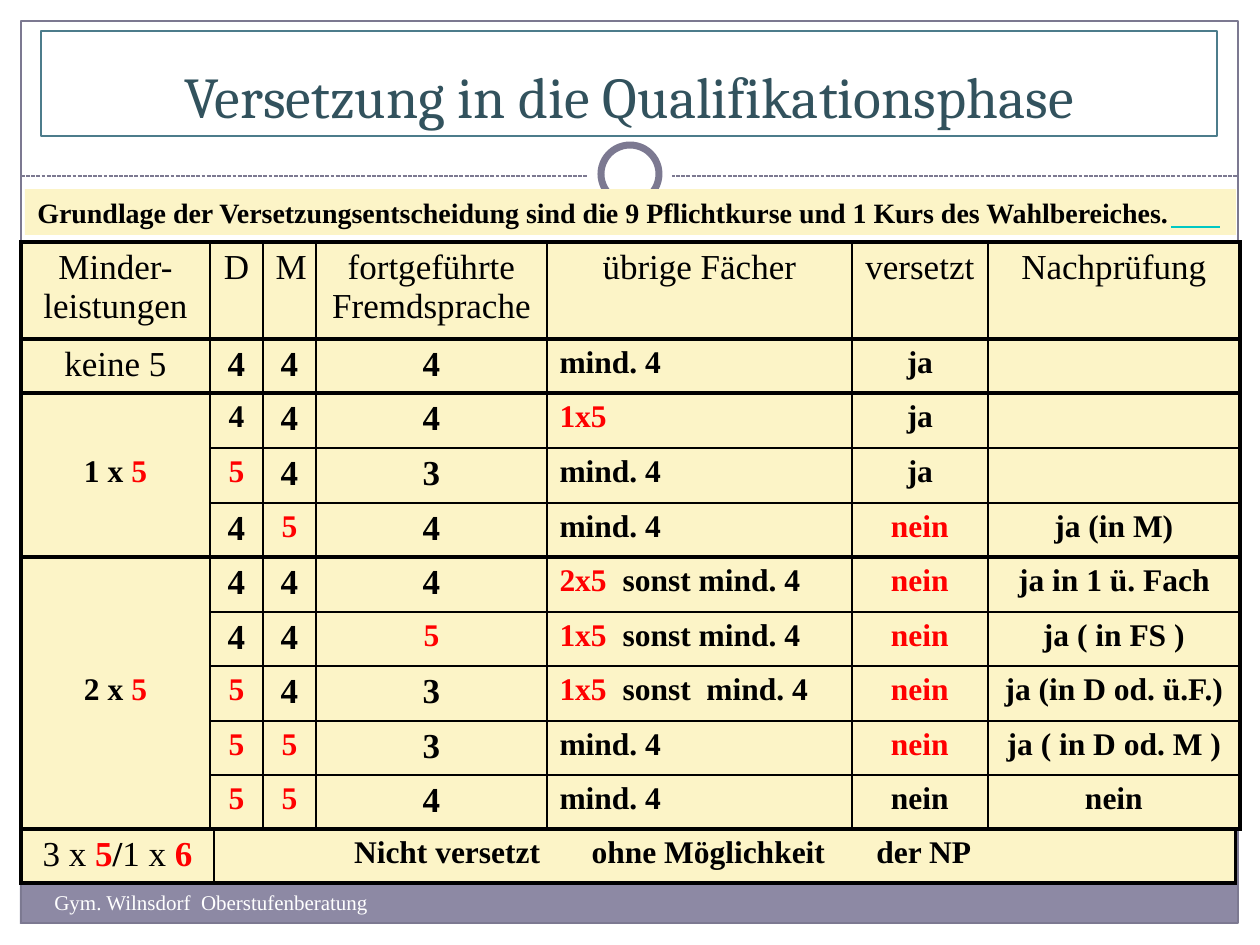
"""Build the slide on promotion rules for the Qualifikationsphase."""
from lxml.etree import SubElement
from pptx import Presentation
from pptx.dml.color import RGBColor
from pptx.enum.dml import MSO_LINE
from pptx.enum.shapes import MSO_CONNECTOR, MSO_SHAPE
from pptx.enum.text import MSO_ANCHOR, PP_ALIGN
from pptx.oxml.ns import qn
from pptx.util import Emu, Pt

BLACK = RGBColor(0x00, 0x00, 0x00)
WHITE = RGBColor(0xFF, 0xFF, 0xFF)
RED = RGBColor(0xFF, 0x00, 0x00)
CREAM = RGBColor(0xFC, 0xF4, 0xC7)
MAUVE = RGBColor(0x8D, 0x89, 0xA4)
VIOLET = RGBColor(0x7C, 0x79, 0x91)
TEAL = RGBColor(0x4C, 0x7C, 0x8B)
DARK_TEAL = RGBColor(0x32, 0x52, 0x5D)
TURQUOISE = RGBColor(0x00, 0xC8, 0xC3)

SERIF = "Times New Roman"
ALIGNS = {"l": PP_ALIGN.LEFT, "c": PP_ALIGN.CENTER, "r": PP_ALIGN.RIGHT}
THICK, THIN, NO_RULE = 2.25, 1, 0
GRADE_COLUMNS = [189, 53, 53, 231, 305, 136, 252]
CLOSING_COLUMNS = [193, 49, 54, 236, 311, 140, 232]
INNER_RULES = [THICK] + [THIN] * 6 + [THICK]
CLOSING_RULES = [THICK, THIN] + [NO_RULE] * 5 + [THICK]


def px(length):
    return Emu(round(length * 914400 / 126))


def box(*lengths):
    return [px(length) for length in lengths]


def red(text):
    return text, {"color": RED}


def big(text):
    return text, {"size": 20}


def plain(text):
    return text, {"size": 20, "bold": False}


def add_text(paragraph, text, size=18, bold=True, color=BLACK, font=SERIF):
    run = paragraph.add_run()
    run.text = text
    run.font.size = Pt(size)
    run.font.bold = bold
    run.font.color.rgb = color
    run.font.name = font


def add_panel(slide, bounds, kind=MSO_SHAPE.RECTANGLE, fill=None, line=None, width=0.75):
    panel = slide.shapes.add_shape(kind, *box(*bounds))
    panel.shadow.inherit = False
    if fill is None:
        panel.fill.background()
    else:
        panel.fill.solid()
        panel.fill.fore_color.rgb = fill
    if line is None:
        panel.line.fill.background()
    else:
        panel.line.color.rgb = line
        panel.line.width = Pt(width)
    return panel


def add_label(panel, text, align="l", anchor=MSO_ANCHOR.TOP, **text_format):
    frame = panel.text_frame
    frame.word_wrap = True
    frame.vertical_anchor = anchor
    frame.paragraphs[0].alignment = ALIGNS[align]
    add_text(frame.paragraphs[0], text, **text_format)


def add_rule(slide, left, right, y, color, dash=None):
    rule = slide.shapes.add_connector(MSO_CONNECTOR.STRAIGHT, *box(left, y, right, y))
    rule.line.color.rgb = color
    rule.line.width = Pt(0.75)
    rule.line.dash_style = dash
    SubElement(rule._element.spPr, qn("a:effectLst"))


def set_borders(cell, left, right, top, bottom):
    properties = cell._tc.get_or_add_tcPr()
    for side, width in zip("LRTB", (left, right, top, bottom)):
        edge = SubElement(properties, qn(f"a:ln{side}"), w=str(Pt(width)))
        if width:
            color = SubElement(SubElement(edge, qn("a:solidFill")), qn("a:srgbClr"))
            color.set("val", str(BLACK))
        else:
            SubElement(edge, qn("a:noFill"))


def fill_cell(cell, content, align):
    paragraph = cell.text_frame.paragraphs[0]
    paragraph.alignment = ALIGNS[align]
    parts = content if isinstance(content, list) else [content]
    for part in filter(None, parts):
        text, text_format = (part, {}) if isinstance(part, str) else part
        add_text(paragraph, text, **text_format)


def add_grades(slide, top, heights, rows, columns=GRADE_COLUMNS, aligns="cccclcc",
               column_rules=INNER_RULES, row_rule=THIN, grouped=False):
    frame = slide.shapes.add_table(
        len(rows), len(columns), *box(21, top, sum(columns), sum(heights)))
    grades = frame.table
    grades.first_row = grades.horz_banding = False
    for column, width in zip(grades.columns, columns):
        column.width = px(width)
    inner_rows = len(rows) - 1
    for r, (contents, height) in enumerate(zip(rows, heights)):
        grades.rows[r].height = px(height)
        for c, content in enumerate(contents):
            cell = grades.cell(r, c)
            inner = NO_RULE if grouped and c == 0 else row_rule
            row_rules = [THICK] + [inner] * inner_rows + [THICK]
            set_borders(cell, *column_rules[c:c + 2], *row_rules[r:r + 2])
            cell.fill.solid()
            cell.fill.fore_color.rgb = CREAM
            fill_cell(cell, content, aligns[c])
    return grades


def add_backdrop(slide):
    add_panel(slide, (20, 881, 1217, 43), fill=MAUVE)
    add_panel(slide, (21, 21, 1217, 902), line=VIOLET)
    add_rule(slide, 21, 1239, 176, VIOLET, MSO_LINE.SQUARE_DOT)
    add_panel(slide, (588, 132, 84, 84), MSO_SHAPE.OVAL, fill=WHITE)
    add_panel(slide, (601, 145, 58, 58), MSO_SHAPE.OVAL, WHITE, VIOLET, 4)


def add_tables(slide):
    three, four, five, fail = big("3"), big("4"), red("5"), red("nein")
    headings = ["Minder-leistungen", "D", "M", "fortgeführte Fremdsprache",
                "übrige Fächer", "versetzt", "Nachprüfung"]
    overview = add_grades(slide, 242, [97, 54], [
        [plain(heading) for heading in headings],
        [plain("keine 5"), four, four, four, "mind. 4", "ja", None],
    ], row_rule=THICK)
    overview.cell(0, 4).text_frame.paragraphs[0].alignment = PP_ALIGN.CENTER
    add_grades(slide, 393, [55, 55, 54], [
        [None, "4", four, four, red("1x5"), "ja", None],
        [["1 x ", five], five, four, three, "mind. 4", "ja", None],
        [None, four, five, four, "mind. 4", fail, "ja (in M)"],
    ], grouped=True)
    add_grades(slide, 557, [55, 54, 55, 54, 54], [
        [None, four, four, four, [red("2x5"), "  sonst mind. 4"], fail, "ja in 1 ü. Fach"],
        [None, four, four, five, [red("1x5"), "  sonst mind. 4"], fail, "ja ( in FS )"],
        [["2 x ", five], five, four, three, [red("1x5"), "  sonst  mind. 4"], fail,
         "ja (in D od. ü.F.)"],
        [None, five, five, three, "mind. 4", fail, "ja ( in D od. M )"],
        [None, five, five, four, "mind. 4", "nein", "nein"],
    ], grouped=True)
    big_red = {"size": 20, "color": RED}
    verdict = [plain("3 x "), ("5", big_red), big("/"), plain("1 x "), ("6", big_red)]
    add_grades(slide, 829, [54], [
        [verdict, None, None, "Nicht versetzt", "ohne Möglichkeit", "der NP", None],
    ], CLOSING_COLUMNS, "cccrclc", CLOSING_RULES)


def main():
    deck = Presentation()
    deck.slide_width, deck.slide_height = box(1260, 945)
    slide = deck.slides.add_slide(deck.slide_layouts[6])
    add_backdrop(slide)
    title = add_panel(slide, (41, 31, 1176, 105), line=TEAL)
    add_label(title, "Versetzung in die Qualifikationsphase", "c", MSO_ANCHOR.BOTTOM,
              size=33, bold=False, color=DARK_TEAL, font="Cambria")
    basis = add_panel(slide, (25, 189, 1211, 46), fill=CREAM)
    add_label(basis, "Grundlage der Versetzungsentscheidung sind die 9 Pflichtkurse "
              "und 1 Kurs des Wahlbereiches.", size=16)
    add_rule(slide, 1171, 1220, 227, TURQUOISE)
    add_tables(slide)
    footer = slide.shapes.add_textbox(*box(42, 883, 494, 50))
    add_label(footer, "Gym. Wilnsdorf  Oberstufenberatung", size=12, bold=False, color=WHITE)
    deck.save("out.pptx")


if __name__ == "__main__":
    main()
